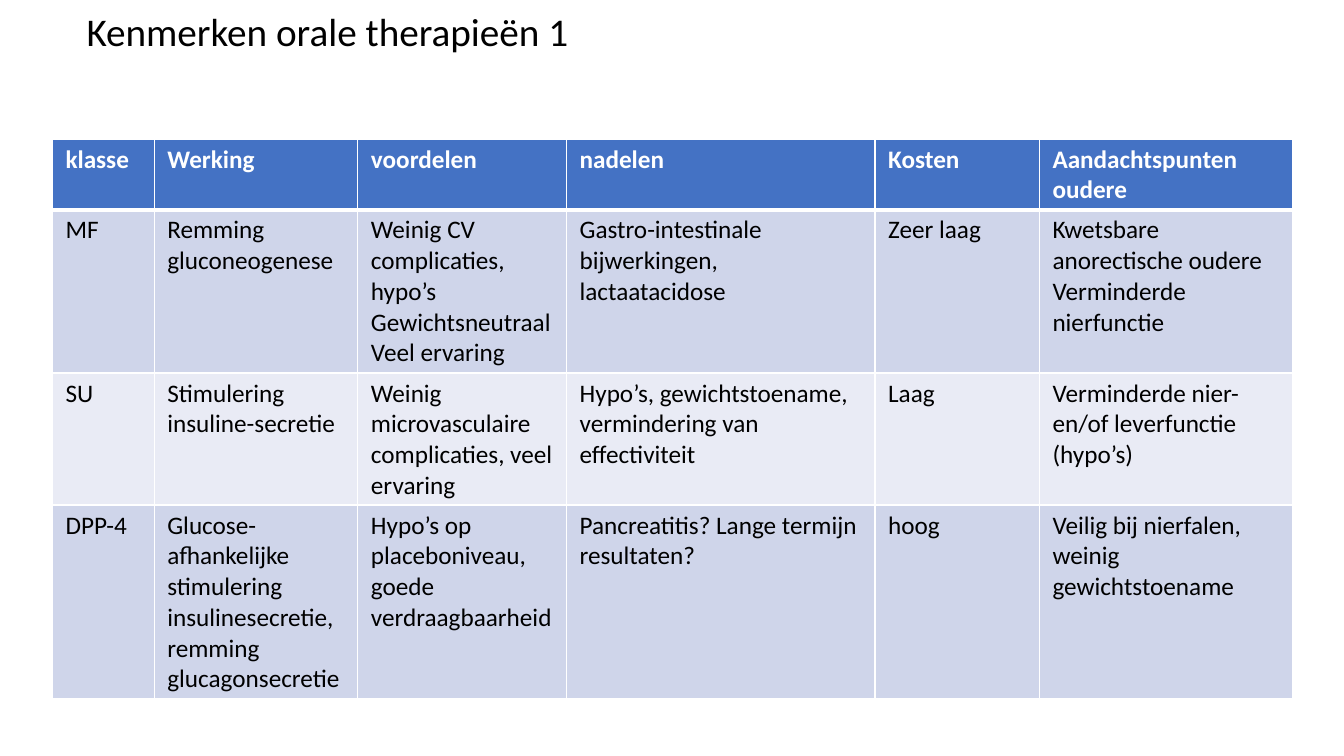
from lxml import etree
from pptx import Presentation
from pptx.dml.color import RGBColor
from pptx.enum.text import MSO_ANCHOR
from pptx.oxml.ns import qn
from pptx.util import Inches, Pt

MIDDLE = MSO_ANCHOR.MIDDLE
FONT = "Calibri"
BLACK = RGBColor(0x00, 0x00, 0x00)
WHITE = RGBColor(0xFF, 0xFF, 0xFF)
HEADER_BLUE = RGBColor(0x44, 0x72, 0xC4)
BAND_DARK = RGBColor(0xCF, 0xD5, 0xEA)
BAND_LIGHT = RGBColor(0xE9, 0xEB, 0xF5)

COLUMN_WIDTHS = (1.01, 2.02, 2.07, 3.06, 1.63, 2.51)
ROW_HEIGHTS = (0.7, 1.62, 1.31, 1.92)
THERAPIES = (
    ("klasse", "Werking", "voordelen", "nadelen", "Kosten", "Aandachtspunten oudere"),
    (
        "MF",
        "Remming gluconeogenese",
        "Weinig CV complicaties, hypo’s Gewichtsneutraal\nVeel ervaring",
        "Gastro-intestinale bijwerkingen, lactaatacidose",
        "Zeer laag",
        "Kwetsbare anorectische oudere\nVerminderde nierfunctie",
    ),
    (
        "SU",
        "Stimulering insuline-secretie",
        "Weinig microvasculaire complicaties, veel ervaring",
        "Hypo’s, gewichtstoename, vermindering van effectiviteit",
        "Laag",
        "Verminderde nier- en/of leverfunctie (hypo’s)",
    ),
    (
        "DPP-4",
        "Glucose-afhankelijke stimulering insulinesecretie, remming glucagonsecretie",
        "Hypo’s op placeboniveau, goede verdraagbaarheid",
        "Pancreatitis? Lange termijn resultaten?",
        "hoog",
        "Veilig bij nierfalen, weinig gewichtstoename",
    ),
)


def format_text(text_frame, size, color, bold=False):
    for paragraph in text_frame.paragraphs:
        for run in paragraph.runs:
            run.font.name = FONT
            run.font.size = Pt(size)
            run.font.bold = bold
            run.font.color.rgb = color


def set_borders(cell, top, bottom):
    """Draw white cell borders, 1 pt at the sides; top and bottom are in points."""
    properties = cell._tc.get_or_add_tcPr()
    widths = {"a:lnL": 1, "a:lnR": 1, "a:lnT": top, "a:lnB": bottom}
    for position, (tag, width) in enumerate(widths.items()):
        line = etree.Element(qn(tag), w=str(Pt(width)))
        fill = etree.SubElement(line, qn("a:solidFill"))
        etree.SubElement(fill, qn("a:srgbClr"), val=str(WHITE))
        properties.insert(position, line)


def add_title(slide, text):
    title = slide.shapes.add_textbox(Inches(0.76), Inches(0.05), Inches(11.81), Inches(0.58))
    frame = title.text_frame
    frame.word_wrap = True
    frame.vertical_anchor = MIDDLE
    frame.text = text
    frame.paragraphs[0].line_spacing = 0.9
    format_text(frame, 28, BLACK)


def fill_cell(cell, text, row_index):
    is_header = row_index == 0
    cell.margin_left = cell.margin_right = Inches(0.13)
    cell.margin_top = cell.margin_bottom = Inches(0.05)
    cell.text_frame.text = text
    format_text(cell.text_frame, 18, WHITE if is_header else BLACK, bold=is_header)
    band = BAND_DARK if row_index % 2 else BAND_LIGHT
    cell.fill.solid()
    cell.fill.fore_color.rgb = HEADER_BLUE if is_header else band
    set_borders(cell, top=3 if row_index == 1 else 1, bottom=3 if is_header else 1)


def add_therapy_table(slide):
    table = slide.shapes.add_table(
        len(ROW_HEIGHTS), len(COLUMN_WIDTHS), Inches(0.52), Inches(1.38),
        Inches(sum(COLUMN_WIDTHS)), Inches(sum(ROW_HEIGHTS)),
    ).table
    for column, width in zip(table.columns, COLUMN_WIDTHS):
        column.width = Inches(width)
    for row_index, (row, height) in enumerate(zip(table.rows, ROW_HEIGHTS)):
        row.height = Inches(height)
        for cell, text in zip(row.cells, THERAPIES[row_index]):
            fill_cell(cell, text, row_index)


def main():
    presentation = Presentation()
    presentation.slide_width = Inches(13.33)
    presentation.slide_height = Inches(7.5)
    slide = presentation.slides.add_slide(presentation.slide_layouts[6])
    add_title(slide, "Kenmerken orale therapieën 1")
    add_therapy_table(slide)
    presentation.save("out.pptx")


if __name__ == "__main__":
    main()
